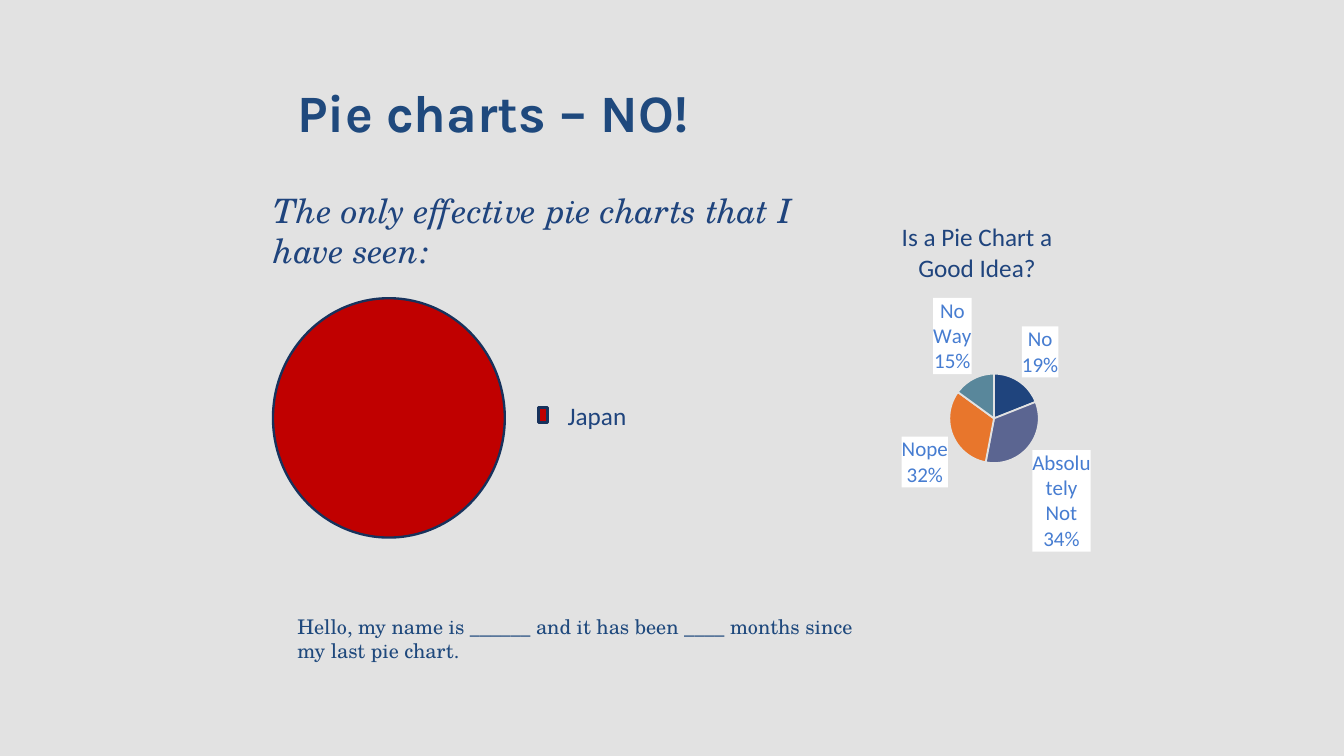
from pptx import Presentation
from pptx.chart.data import CategoryChartData
from pptx.dml.color import RGBColor
from pptx.enum.chart import XL_CHART_TYPE, XL_LABEL_POSITION
from pptx.enum.shapes import MSO_SHAPE
from pptx.enum.text import MSO_ANCHOR, MSO_AUTO_SIZE, PP_ALIGN
from pptx.oxml import parse_xml
from pptx.oxml.ns import nsdecls, qn
from pptx.util import Pt

PIE = XL_CHART_TYPE.PIE
OUTSIDE = XL_LABEL_POSITION.OUTSIDE_END
ELLIPSE, RECTANGLE = MSO_SHAPE.OVAL, MSO_SHAPE.RECTANGLE
TOP, MIDDLE = MSO_ANCHOR.TOP, MSO_ANCHOR.MIDDLE
LEFT, CENTER = PP_ALIGN.LEFT, PP_ALIGN.CENTER
FIXED = MSO_AUTO_SIZE.NONE

TITLE = ("Pie charts – NO!", (247.7, 27.4, 496, 136.8))
CONFESSION = (
    "Hello, my name is ______ and it has been ____ months since my last pie chart.",
    (247.7, 522.7, 496, 41.8),
)
CAPTIONS = [
    ("The only effective pie charts that I have seen:", (227.5, 159.1, 507, 77), "lead", LEFT),
    ("Japan", (479.5, 339.8, 69.8, 33.1), "label", LEFT),
    ("Is a Pie Chart a Good Idea?", (747.4, 186.5, 180, 59.8), "label", CENTER),
]
FLAG_SHAPES = [
    (ELLIPSE, (234, 255.6, 198.7, 205.2)),
    (RECTANGLE, (461.5, 349.2, 7.9, 13)),
]
ANSWERS = [("No", 19), ("Absolutely Not", 34), ("Nope", 32), ("No Way", 15)]
CHART_BOX = (704.2, 246.2, 266.4, 255.6)
PLOT_SHARE = {"x": 0.41, "y": 0.29, "w": 0.29, "h": 0.3}

THEME = {
    "background": "E2E2E2",
    "red": "C00000",
    "outline": "17325C",
    "slices": ["1F447D", "5B6591", "E8762C", "59879B"],
    "label_fill": "FFFFFF",
    "styles": {
        "title": ("Karla", 45, "1F497D", True, False),
        "body": ("TeX Gyre Schola", 17.3, "1F497D", False, False),
        "lead": ("TeX Gyre Schola", 28.8, "1F447D", False, True),
        "label": ("Calibri", 21.6, "1F447D", False, False),
        "chart": ("Calibri", 10, "1F447D", False, False),
        "slice": ("Calibri", 18, "477DD1", False, False),
    },
}


def color(name):
    return RGBColor.from_string(name)


def style_font(font, style):
    font.name, size, shade, font.bold, font.italic = THEME["styles"][style]
    font.size = Pt(size)
    font.color.rgb = color(shade)


def write(box, text, style, alignment=LEFT, anchor=TOP):
    frame = box.text_frame
    frame.text = text
    frame.word_wrap = True
    frame.auto_size = FIXED
    frame.vertical_anchor = anchor
    para = frame.paragraphs[0]
    para.alignment = alignment
    para.space_before = Pt(0)
    for span in para.runs:
        style_font(span.font, style)


def place(box, bounds):
    box.left, box.top, box.width, box.height = map(Pt, bounds)


def add_flag_shape(page, kind, bounds):
    shape = page.shapes.add_shape(kind, *map(Pt, bounds))
    shape.shadow.inherit = False
    shape.fill.solid()
    shape.fill.fore_color.rgb = color(THEME["red"])
    shape.line.color.rgb = color(THEME["outline"])
    shape.line.width = Pt(2)


def set_plot_layout(chart):
    plot_area = chart._chartSpace.chart.plotArea
    for layout in plot_area.findall(qn("c:layout")):
        plot_area.remove(layout)
    sizes = "".join(f'<c:{key} val="{share}"/>' for key, share in PLOT_SHARE.items())
    plot_area.insert(0, parse_xml(
        f'<c:layout {nsdecls("c")}><c:manualLayout><c:layoutTarget val="inner"/>'
        f'<c:xMode val="edge"/><c:yMode val="edge"/>{sizes}</c:manualLayout></c:layout>'
    ))


def style_labels(labels):
    labels.show_value = False
    labels.show_category_name = True
    labels.show_percentage = True
    labels.number_format = "0%"
    labels.number_format_is_linked = False
    labels.position = OUTSIDE
    style_font(labels.font, "slice")
    element = labels._element
    element.find(qn("c:txPr")).addprevious(parse_xml(
        f'<c:spPr {nsdecls("c", "a")}><a:solidFill>'
        f'<a:srgbClr val="{THEME["label_fill"]}"/></a:solidFill></c:spPr>'
    ))
    element.find(qn("c:showBubbleSize")).addnext(
        parse_xml(f'<c:separator {nsdecls("c")}>\n</c:separator>')
    )


def add_answer_chart(page):
    data = CategoryChartData()
    data.categories = [answer for answer, votes in ANSWERS]
    data.add_series("Series 1", [votes for answer, votes in ANSWERS])
    chart = page.shapes.add_chart(PIE, *map(Pt, CHART_BOX), data).chart
    chart.has_title = False
    chart.has_legend = False
    style_font(chart.font, "chart")
    set_plot_layout(chart)
    plot = chart.plots[0]
    plot.vary_by_categories = True
    for index, shade in enumerate(THEME["slices"]):
        slice_format = plot.series[0].points[index].format
        slice_format.fill.solid()
        slice_format.fill.fore_color.rgb = color(shade)
        slice_format.line.color.rgb = color(THEME["background"])
        slice_format.line.width = Pt(1.5)
    plot.has_data_labels = True
    style_labels(plot.data_labels)


def main():
    deck = Presentation()
    deck.slide_width, deck.slide_height = Pt(1152), Pt(648)
    page = deck.slides.add_slide(deck.slide_layouts[1])
    page.background.fill.solid()
    page.background.fill.fore_color.rgb = color(THEME["background"])

    title, body = page.shapes.title, page.placeholders[1]
    place(title, TITLE[1])
    write(title, TITLE[0], "title", anchor=MIDDLE)
    place(body, CONFESSION[1])
    write(body, CONFESSION[0], "body")
    properties = body.text_frame.paragraphs[0]._p.get_or_add_pPr()
    properties.set("marL", "0")
    properties.set("indent", "0")
    properties.append(parse_xml(f'<a:buNone {nsdecls("a")}/>'))

    for kind, bounds in FLAG_SHAPES:
        add_flag_shape(page, kind, bounds)
    add_answer_chart(page)
    for text, bounds, style, alignment in CAPTIONS:
        write(page.shapes.add_textbox(*map(Pt, bounds)), text, style, alignment)

    deck.save("out.pptx")


if __name__ == "__main__":
    main()
